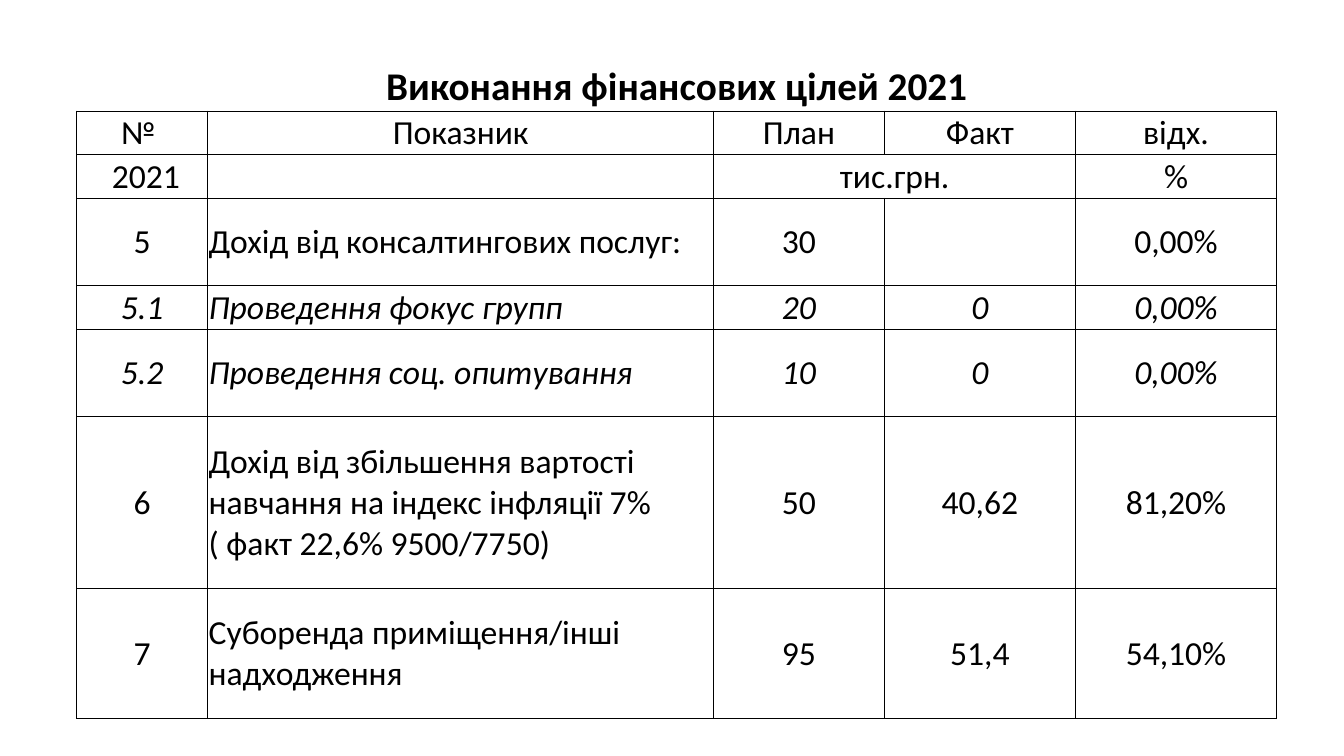
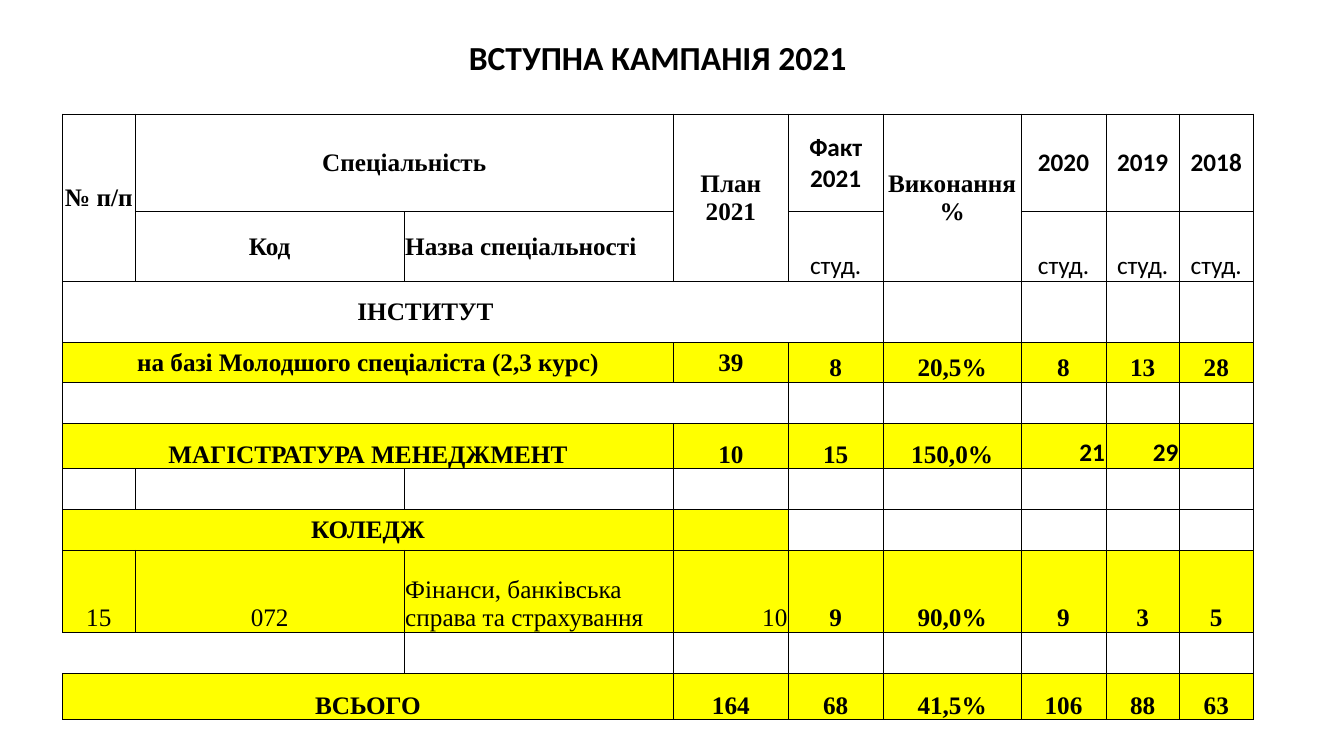
from pptx import Presentation
from pptx.dml.color import RGBColor
from pptx.enum.text import MSO_ANCHOR, PP_ALIGN
from pptx.oxml import parse_xml
from pptx.oxml.ns import nsdecls
from pptx.util import Inches, Pt

LEFT, CENTER, RIGHT = PP_ALIGN.LEFT, PP_ALIGN.CENTER, PP_ALIGN.RIGHT
MIDDLE, BOTTOM = MSO_ANCHOR.MIDDLE, MSO_ANCHOR.BOTTOM
BLANK = 6
BLACK, WHITE, YELLOW = "000000", "FFFFFF", "FFFF00"
SANS, SERIF = "Calibri", "Times New Roman"
SIDES = ("L", "R", "T", "B")
INSETS = {"margin_left": 0.01, "margin_right": 0.01, "margin_top": 0.01, "margin_bottom": 0}
TITLE_FORMAT = {"name": SANS, "bold": True, "anchor": BOTTOM}
OPEN_TOP = {"hidden": "LRT"}
OPEN = {"hidden": "LRTB"}

GOAL_FORMAT = {"name": SANS, "size": 24, "align": CENTER, "anchor": MIDDLE}
ITALIC = {"italic": True}
LEFT_ALIGNED = {"align": LEFT}
GOAL_COLUMNS = [1.3, 5.02, 1.69, 1.9, 1.99]
GOAL_HEIGHTS = [0.52, 0.43, 0.44, 0.86, 0.44, 0.86, 1.71, 1.29]
GOAL_ROWS = [
    (["Виконання фінансових цілей 2021"] + [""] * 4,
     {**TITLE_FORMAT, **OPEN_TOP, "size": 28, "border": 0.5}),
    (["№ ", "Показник", "План", "Факт", "відх."], {"border": 0.5}),
    ([" 2021", "", "тис.грн.", "", "%"], {}),
    (["5", ("Дохід від консалтингових послуг:", LEFT_ALIGNED), "30", "", "0,00%"], {}),
    (["5.1", ("Проведення фокус групп", LEFT_ALIGNED), "20", "0", "0,00%"], ITALIC),
    (["5.2", ("Проведення соц. опитування", LEFT_ALIGNED), "10", "0", "0,00%"], ITALIC),
    (["6", ("Дохід від збільшення вартості навчання на індекс інфляції 7% "
            "( факт 22,6% 9500/7750)", LEFT_ALIGNED), "50", "40,62", "81,20%"], {}),
    (["7", ("Суборенда приміщення/інші надходження", LEFT_ALIGNED), "95", "51,4", "54,10%"], {}),
]
GOAL_MERGES = {(0, 0): (1, 5), (2, 2): (1, 2)}

INTAKE_FORMAT = {"name": SERIF, "size": 18, "bold": True, "align": CENTER,
                 "anchor": BOTTOM, "border": 0.5}
MIDDLE_ROW = {"anchor": MIDDLE}
FILLED = {"fill": YELLOW}
SANS_CELL = {"name": SANS}
SANS_RIGHT = {"name": SANS, "align": RIGHT}
REGULAR = {"bold": False}
UNIT = ("студ.", {"name": SANS, "bold": False})
NO_RIGHT, NO_LEFT = {"hidden": "R"}, {"hidden": "L"}
INTAKE_COLUMNS = [0.72, 2.67, 2.67, 1.14, 0.94, 1.37, 0.84, 0.73, 0.73]
INTAKE_HEIGHTS = [0.47, 0.34, 0.97, 0.69, 0.61, 0.39, 0.41, 0.45, 0.4, 0.41, 0.81, 0.41, 0.46]
INTAKE_ROWS = [
    (["ВСТУПНА КАМПАНІЯ 2021"] + [""] * 8, {**TITLE_FORMAT, **OPEN, "size": 24}),
    ([""] * 9, OPEN_TOP),
    (["№ п/п", "Спеціальність", "", "План 2021", ("Факт 2021", SANS_CELL), "Виконання %",
      ("2020", SANS_CELL), ("2019", SANS_CELL), ("2018", SANS_CELL)], MIDDLE_ROW),
    (["", ("Код", MIDDLE_ROW), ("Назва спеціальності", {"anchor": MIDDLE, "align": LEFT}),
      "", UNIT, "", UNIT, UNIT, UNIT], {}),
    ([("ІНСТИТУТ", NO_RIGHT)] + [("", NO_RIGHT)] * 3 + [("", NO_LEFT)] + [""] * 4, MIDDLE_ROW),
    ([("на базі Молодшого спеціаліста (2,3 курс)", MIDDLE_ROW), "", "", ("39", MIDDLE_ROW),
      "8", "20,5%", "8", "13", "28"], FILLED),
    ([""] * 9, {}),
    (["МАГІСТРАТУРА МЕНЕДЖМЕНТ", "", "", "10", "15", "150,0%",
      ("21", SANS_RIGHT), ("29", SANS_RIGHT), ""], FILLED),
    ([""] * 9, {}),
    ([("КОЛЕДЖ", FILLED)] + [("", FILLED)] * 3 + [""] * 5, MIDDLE_ROW),
    ([("15", REGULAR), ("072", REGULAR),
      ("Фінанси, банківська справа та страхування", {"bold": False, "align": LEFT}),
      ("10", {"bold": False, "align": RIGHT}), "9", "90,0%", "9", "3", "5"], FILLED),
    ([("", {"hidden": "LR"}), ("", NO_LEFT)] + [""] * 7, {}),
    (["ВСЬОГО", "", "", "164", "68", "41,5%", "106", "88", "63"], FILLED),
]
INTAKE_MERGES = {(0, 0): (1, 9), (2, 0): (2, 1), (2, 1): (1, 2), (2, 3): (2, 1),
                 (2, 5): (2, 1), (4, 0): (1, 4), (5, 0): (1, 3), (6, 0): (1, 4),
                 (7, 0): (1, 3), (9, 0): (1, 3), (12, 0): (1, 3)}


def color(value):
    """Turn a hex string into a colour."""
    return RGBColor.from_string(value)


def write(para, text, look):
    """Write one formatted span into a paragraph."""
    para.alignment = look["align"]
    span = para.add_run()
    span.text = text
    span.font.size = Pt(look["size"])
    span.font.color.rgb = color(BLACK)
    for name in ("name", "bold", "italic"):
        setattr(span.font, name, look.get(name, False))


def add_borders(cell, width, hidden):
    """Draw the four cell borders, leaving out the hidden sides."""
    properties = cell._tc.get_or_add_tcPr()
    for index, side in enumerate(SIDES):
        paint = (f'<a:solidFill><a:srgbClr val="{BLACK}"/></a:solidFill>'
                 if side not in hidden else "<a:noFill/>")
        line = parse_xml(f'<a:ln{side} {nsdecls("a")} w="{Pt(width)}">{paint}</a:ln{side}>')
        properties.insert(index, line)


def fill_cell(cell, text, look):
    """Format one table cell and write its text."""
    for name, value in INSETS.items():
        setattr(cell, name, Inches(value))
    cell.vertical_anchor = look["anchor"]
    cell.fill.solid()
    cell.fill.fore_color.rgb = color(look.get("fill", WHITE))
    add_borders(cell, look.get("border", 1), look.get("hidden", ""))
    if text:
        write(cell.text_frame.paragraphs[0], text, look)


def add_grid(deck, left, top, columns, heights, rows, merges, base):
    """Add a slide with a table combining base, row and cell formats."""
    page = deck.slides.add_slide(deck.slide_layouts[BLANK])
    frame = page.shapes.add_table(len(rows), len(columns), Inches(left), Inches(top),
                                  Inches(sum(columns)), Inches(sum(heights)))
    table = frame.table
    table.first_row = table.horz_banding = False
    for column, width in zip(table.columns, columns):
        column.width = Inches(width)
    for row, height in zip(table.rows, heights):
        row.height = Inches(height)
    for row_index, (entries, row_look) in enumerate(rows):
        for column_index, entry in enumerate(entries):
            text, cell_look = entry if isinstance(entry, tuple) else (entry, {})
            fill_cell(table.cell(row_index, column_index), text, {**base, **row_look, **cell_look})
    for (row, column), (height, width) in merges.items():
        table.cell(row, column).merge(table.cell(row + height - 1, column + width - 1))


def main():
    """Build and save the deck."""
    deck = Presentation()
    deck.slide_width, deck.slide_height = Inches(13.33), Inches(7.5)
    add_grid(deck, 0.76, 0.58, GOAL_COLUMNS, GOAL_HEIGHTS, GOAL_ROWS, GOAL_MERGES, GOAL_FORMAT)
    add_grid(deck, 0.62, 0.32, INTAKE_COLUMNS, INTAKE_HEIGHTS, INTAKE_ROWS,
             INTAKE_MERGES, INTAKE_FORMAT)
    deck.save("out.pptx")


if __name__ == "__main__":
    main()
